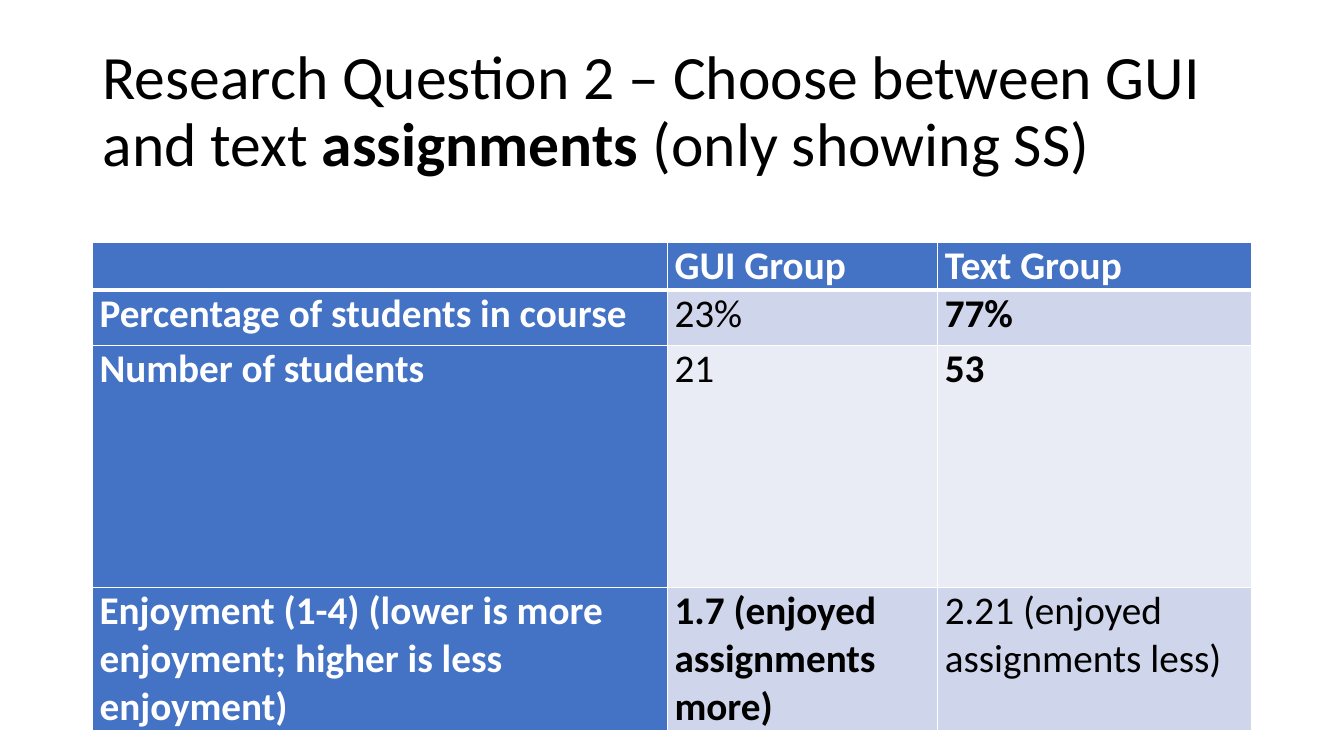
from lxml import etree
from pptx import Presentation
from pptx.dml.color import RGBColor
from pptx.enum.text import MSO_ANCHOR, MSO_AUTO_SIZE, PP_ALIGN
from pptx.oxml.ns import qn
from pptx.util import Cm, Pt

FONT = "Calibri"
COLORS = {
    "text": "000000",
    "light": "FFFFFF",
    "header": "4472C4",
    "odd_row": "CFD5EA",
    "even_row": "E9EBF5",
}
COLUMN_WIDTHS = [14.49, 6.81, 7.91]
ROW_HEIGHTS = [1.03, 1.39, 6.1, 2.79]
# Each row: label, GUI value, text value, and the column whose value is bold
ROWS = [
    ("", "GUI Group", "Text Group", None),
    ("Percentage of students in course", "23%", "77%", 2),
    ("Number of students", "21", "53", 2),
    ("Enjoyment (1-4) (lower is more enjoyment; higher is less enjoyment)",
     "1.7 (enjoyed assignments more)", "2.21 (enjoyed assignments less)", 1),
]


def add_run(paragraph, text, size, color, bold=False):
    run = paragraph.add_run()
    run.text = text
    run.font.name = FONT
    run.font.size = Pt(size)
    run.font.bold = bold
    run.font.color.rgb = RGBColor.from_string(COLORS[color])


def fill_title(title):
    title.left, title.top = Cm(2.33), Cm(1.01)
    title.width, title.height = Cm(29.21), Cm(3.68)
    frame = title.text_frame
    frame.word_wrap = True
    frame.auto_size = MSO_AUTO_SIZE.NONE
    frame.vertical_anchor = MSO_ANCHOR.MIDDLE
    paragraph = frame.paragraphs[0]
    paragraph.alignment = PP_ALIGN.LEFT
    paragraph.line_spacing = 0.9
    add_run(paragraph, "Research Question 2 – Choose between GUI and text ", 44, "text")
    add_run(paragraph, "assignments", 44, "text", bold=True)
    add_run(paragraph, " (only showing SS)", 44, "text")


def set_borders(cell, widths):
    """Draw light borders; widths maps the sides L, R, T, B, in that order, to points."""
    properties = cell._tc.get_or_add_tcPr()
    for side, width in widths.items():
        line = etree.SubElement(properties, qn(f"a:ln{side}"), w=str(Pt(width)))
        fill = etree.SubElement(line, qn("a:solidFill"))
        etree.SubElement(fill, qn("a:srgbClr"), val=COLORS["light"])


def format_cell(cell, text, fill, color, bold):
    cell.margin_left = cell.margin_right = Cm(0.18)
    cell.margin_top = cell.margin_bottom = 0
    cell.fill.solid()
    cell.fill.fore_color.rgb = RGBColor.from_string(COLORS[fill])
    if text:
        add_run(cell.text_frame.paragraphs[0], text, 28, color, bold)


def add_results_table(slide):
    table = slide.shapes.add_table(
        len(ROWS), len(COLUMN_WIDTHS), Cm(2.33), Cm(6.1),
        Cm(sum(COLUMN_WIDTHS)), Cm(sum(ROW_HEIGHTS))).table
    for column, width in zip(table.columns, COLUMN_WIDTHS):
        column.width = Cm(width)
    for row, height in zip(table.rows, ROW_HEIGHTS):
        row.height = Cm(height)
    for row_index, (*texts, bold_column) in enumerate(ROWS):
        for column_index, text in enumerate(texts):
            cell = table.cell(row_index, column_index)
            set_borders(cell, {"L": 1, "R": 1,
                               "T": 3 if row_index == 1 else 1,
                               "B": 3 if row_index == 0 else 1})
            if row_index == 0 or column_index == 0:
                format_cell(cell, text, "header", "light", True)
            else:
                fill = "odd_row" if row_index % 2 else "even_row"
                format_cell(cell, text, fill, "text", column_index == bold_column)


def main():
    presentation = Presentation()
    presentation.slide_width, presentation.slide_height = Cm(33.87), Cm(19.05)
    slide = presentation.slides.add_slide(presentation.slide_layouts[5])
    fill_title(slide.shapes.title)
    add_results_table(slide)
    presentation.save("out.pptx")


if __name__ == "__main__":
    main()
